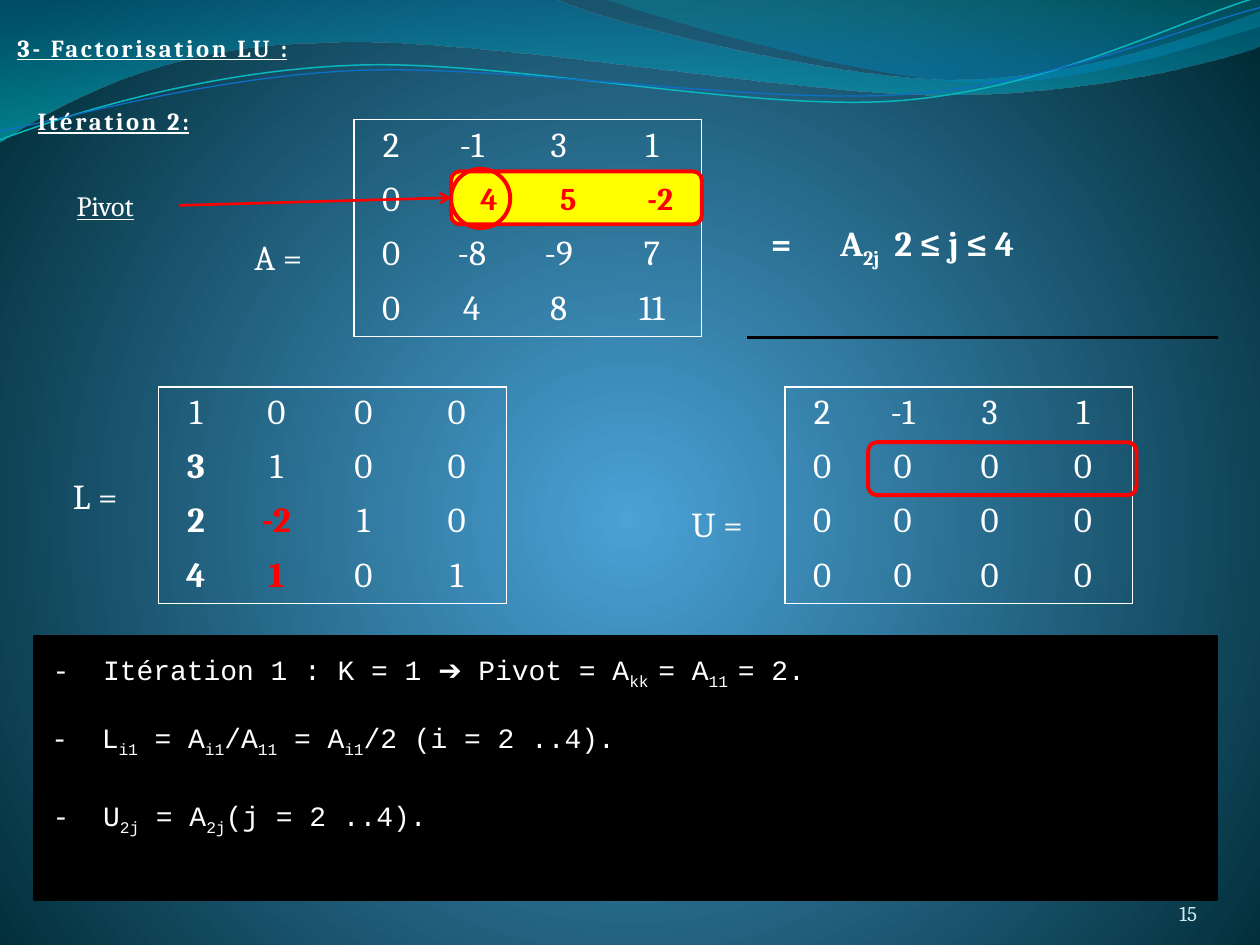
from dataclasses import dataclass

from lxml.etree import SubElement
from pptx import Presentation
from pptx.dml.color import RGBColor
from pptx.enum.shapes import MSO_CONNECTOR as Connector, MSO_SHAPE as Shape
from pptx.enum.text import MSO_ANCHOR as Anchor, PP_ALIGN as Align
from pptx.oxml import parse_xml
from pptx.oxml.ns import nsdecls, qn
from pptx.util import Inches, Pt


@dataclass(frozen=True)
class Theme:
    white: str = "FFFFFF"
    black: str = "000000"
    red: str = "FF0000"
    yellow: str = "FFFF00"
    pale: str = "D1EAED"
    teal: str = "09B7BF"
    blue: str = "0F6FC6"
    glow: tuple = ((0, "4AA2D6", 100), (100, "002B36", 100))
    wave: tuple = ((0, "0074A0", 45), (100, "00C4CD", 55))
    crest: tuple = ((20, "008ABF", 45), (100, "00A0A8", 30))
    serif: str = "Cambria"
    mono: str = "Courier New"
    symbol: str = "Arial"
    matrix: int = 20
    pivot: int = 18
    body: int = 16
    heading: int = 14
    number: int = 12


theme = Theme()


def write(text, frame, size, color=theme.white, font=theme.serif, bold=False,
          underline=False, spacing=0, align=Align.LEFT, tabs=()):
    paragraph = frame.paragraphs[0]
    paragraph.alignment = align
    if tabs:
        tab_list = SubElement(paragraph._p.get_or_add_pPr(), qn("a:tabLst"))
        for position, kind in tabs:
            SubElement(tab_list, qn("a:tab"), pos=str(Inches(position)), algn=kind)
    for piece in text.split("|"):
        run = paragraph.add_run()
        run.text = piece.removeprefix("_")
        run.font.name = theme.symbol if piece == "➔" else font
        run.font.size = Pt(size)
        run.font.bold = bold
        run.font.underline = underline
        run.font.color.rgb = RGBColor.from_string(color)
        properties = run._r.get_or_add_rPr()
        if piece.startswith("_"):
            properties.set("baseline", "-25000")
        if spacing:
            properties.set("spc", str(spacing))


def gradient(stops, direction):
    marks = "".join(
        f'<a:gs pos="{place * 1000}"><a:srgbClr val="{color}">'
        f'<a:alpha val="{alpha * 1000}"/></a:srgbClr></a:gs>'
        for place, color, alpha in stops)
    return parse_xml(f'<a:gradFill {nsdecls("a")} rotWithShape="1">'
                     f'<a:gsLst>{marks}</a:gsLst>{direction}</a:gradFill>')


presentation = Presentation()
presentation.slide_width = Inches(10)
presentation.slide_height = Inches(7.5)
slide = presentation.slides.add_slide(presentation.slide_layouts[6])
shapes = slide.shapes

slide.background.fill.solid()
background = slide._element.cSld.bg.bgPr
background.replace(background[0], gradient(
    theme.glow,
    '<a:path path="circle"><a:fillToRect l="50000" t="55000" r="50000" b="45000"/></a:path>'))

waves = [
    ([(0, 0), (4.4, -0.01), (4.76, 0.17, 6.64, 0.63, 7.58, 0.63),
      (8.53, 0.63, 9.58, 0.26, 10, 0.09), (10.01, 0.36),
      (9.83, 0.44, 8.7, 0.76, 7.46, 0.75), (6.22, 0.75, 3.82, 0.28, 2.57, 0.34),
      (1.29, 0.35, 0.46, 0.83, -0.01, 1.13)], theme.wave, 90, None, 0),
    ([(4.79, -0.01), (5.09, 0.11, 6.82, 0.62, 7.69, 0.65),
      (8.56, 0.69, 9.61, 0.32, 10, 0.21), (10, 0)], theme.crest, 270, None, 0),
    ([(0, 1.11), (0.48, 0.93, 1.58, 0.57, 2.77, 0.52),
      (3.95, 0.46, 5.93, 0.89, 7.13, 0.8), (8.33, 0.71, 9.38, 0.15, 9.98, -0.02)],
     None, 0, theme.teal, 0.85),
    ([(0, 1.04), (0.47, 0.96, 1.64, 0.61, 2.83, 0.56),
      (4.03, 0.51, 5.97, 0.83, 7.17, 0.75), (8.36, 0.67, 9.41, 0.21, 10, 0.06)],
     None, 0, theme.blue, 0.75),
]
for segments, stops, angle, line_color, line_width in waves:
    points = [(Inches(segment[-2]), Inches(segment[-1])) for segment in segments]
    builder = shapes.build_freeform(*points[0])
    builder.add_line_segments(points[1:], close=stops is not None)
    wave = builder.convert_to_shape()
    wave.shadow.inherit = False
    sides = list(wave._element.iter(qn("a:lnTo")))
    for side, segment in zip(sides, segments[1:]):
        if len(segment) == 6:
            curve = parse_xml(f'<a:cubicBezTo {nsdecls("a")}/>')
            for x, y in zip(segment[::2], segment[1::2]):
                SubElement(curve, qn("a:pt"), x=str(Inches(x) - wave.left),
                           y=str(Inches(y) - wave.top))
            side.getparent().replace(side, curve)
    if stops:
        wave.line.fill.background()
        wave.fill.solid()
        properties = wave._element.spPr
        properties.replace(properties.find(qn("a:solidFill")),
                           gradient(stops, f'<a:lin ang="{angle * 60000}" scaled="0"/>'))
    else:
        wave.fill.background()
        wave.line.color.rgb = RGBColor.from_string(line_color)
        wave.line.width = Pt(line_width)

matrices = [
    (2.81, 0.95, ["2 -1 3 1", "0 4 5 -2", "0 -8 -9 7", "0 4 8 11"]),
    (1.26, 3.07, ["1 0 0 0", "*3 1 0 0", "*2 !-2 1 0", "*4 !1 0 1"]),
    (6.23, 3.07, ["2 -1 3 1"] + ["0 0 0 0"] * 3),
]
for left, top, rows in matrices:
    table = shapes.add_table(4, 4, Inches(left), Inches(top), Inches(2.76), Inches(1.72)).table
    table.first_row = table.horz_banding = False
    table._tbl.tblPr.find(qn("a:tableStyleId")).text = "{2D5ABB26-0587-4C30-8999-92F81FD0307C}"
    for column, width in zip(table.columns, (0.59, 0.69, 0.69, 0.79)):
        column.width = Inches(width)
    for i, row in enumerate(rows):
        table.rows[i].height = Inches(0.43)
        for j, value in enumerate(row.split()):
            cell = table.cell(i, j)
            write(value.lstrip("*!"), cell.text_frame, theme.matrix, align=Align.CENTER,
                  bold=value[0] in "*!",
                  color=theme.red if value[0] == "!" else theme.white)
            edges = {"lnL": j == 0, "lnR": j == 3, "lnT": i == 0, "lnB": i == 3}
            for edge in (name for name, outer in edges.items() if outer):
                border = SubElement(cell._tc.get_or_add_tcPr(), qn(f"a:{edge}"), w=str(Pt(0.96)))
                fill = SubElement(border, qn("a:solidFill"))
                SubElement(fill, qn("a:srgbClr"), val=theme.white)
            cell.fill.background()

heading = dict(size=theme.heading, bold=True, underline=True, spacing=150)
symbol = dict(size=theme.matrix)
page_number = dict(size=theme.number, color=theme.pale, align=Align.RIGHT)
labels = [
    ("15", 8.67, 6.95, 0.83, 0.4, page_number),
    ("3- Factorisation LU :", 0.04, 0.21, 3.68, 0.33, heading),
    ("Itération 2:", 0.2, 0.79, 1.42, 0.33, heading),
    ("A =", 1.92, 1.82, 0.7, 0.43, symbol),
    ("L =", 0.48, 3.72, 0.7, 0.43, symbol),
    ("U =", 5.39, 3.94, 0.7, 0.43, symbol),
    ("=", 6.02, 1.71, 0.37, 0.43, dict(symbol, bold=True)),
    ("A|_2j|\t2 ≤ j ≤ 4", 6.57, 1.71, 2.44, 0.44,
     dict(symbol, bold=True, tabs=[(0.43, "l")])),
    ("Pivot", 0.51, 1.45, 0.91, 0.36, dict(size=theme.body, underline=True)),
]
for text, left, top, width, height, style in labels:
    label = shapes.add_textbox(Inches(left), Inches(top), Inches(width), Inches(height))
    frame = label.text_frame
    frame.word_wrap = True
    if style is page_number:
        frame.vertical_anchor = Anchor.BOTTOM
        frame.margin_left = frame.margin_right = frame.margin_top = frame.margin_bottom = 0
    write(text, frame, **style)
pivot_label = label

formula = dict(size=theme.body, font=theme.mono, tabs=[(0.4, "l")])
pivot_row = dict(size=theme.pivot, color=theme.red, bold=True,
                 tabs=[(0.24, "ctr"), (0.87, "ctr"), (1.6, "ctr")])
boxes = [
    (Shape.RECTANGLE, 0.28, 5.05, 9.37, 2.09, theme.black, theme.black, 2, "", {}),
    (Shape.RECTANGLE, 0.32, 5.08, 9.25, 0.5, theme.black, None, 0,
     "-\tItération 1 : K = 1 |➔| Pivot = A|_kk |= A|_11 |= 2.", formula),
    (Shape.RECTANGLE, 0.31, 5.62, 6.96, 0.5, theme.black, None, 0,
     "-\tL|_i1| = A|_i1|/A|_11| = A|_i1|/2 (i = 2 ..4).", formula),
    (Shape.ROUNDED_RECTANGLE, 3.58, 1.36, 1.99, 0.42, theme.yellow, theme.red, 2.25,
     "\t4\t5\t-2", pivot_row),
    (Shape.RECTANGLE, 0.32, 6.24, 6.96, 0.5, theme.black, None, 0,
     "-\tU|_2j| = A|_2j|(j = 2 ..4).", formula),
    (Shape.OVAL, 3.58, 1.34, 0.47, 0.47, None, theme.red, 2.25, "", {}),
    (Shape.ROUNDED_RECTANGLE, 6.89, 3.51, 2.13, 0.42, None, theme.red, 2.25, "", {}),
]
for kind, left, top, width, height, fill, line, line_width, text, style in boxes:
    box = shapes.add_shape(kind, Inches(left), Inches(top), Inches(width), Inches(height))
    box.shadow.inherit = False
    if fill:
        box.fill.solid()
        box.fill.fore_color.rgb = RGBColor.from_string(fill)
    else:
        box.fill.background()
    if line:
        box.line.color.rgb = RGBColor.from_string(line)
        box.line.width = Pt(line_width)
    else:
        box.line.fill.background()
    if text:
        frame = box.text_frame
        frame.vertical_anchor = Anchor.MIDDLE
        if style is pivot_row:
            frame.margin_left = frame.margin_right = Inches(0.04)
            frame.margin_top = frame.margin_bottom = 0
            pivot_box = box
        write(text, frame, **style)

connectors = [
    (1.42, 1.63, 3.58, 1.57, theme.red, True),
    (5.93, 2.68, 9.67, 2.68, theme.black, False),
]
for x1, y1, x2, y2, color, is_arrow in connectors:
    connector = shapes.add_connector(Connector.STRAIGHT, Inches(x1), Inches(y1),
                                     Inches(x2), Inches(y2))
    connector.line.color.rgb = RGBColor.from_string(color)
    connector.line.width = Pt(1.5)
    if is_arrow:
        connector.begin_connect(pivot_label, 3)
        connector.end_connect(pivot_box, 1)
        SubElement(connector.line._get_or_add_ln(), qn("a:tailEnd"), type="arrow")
    SubElement(connector._element.spPr, qn("a:effectLst"))

presentation.save("out.pptx")
